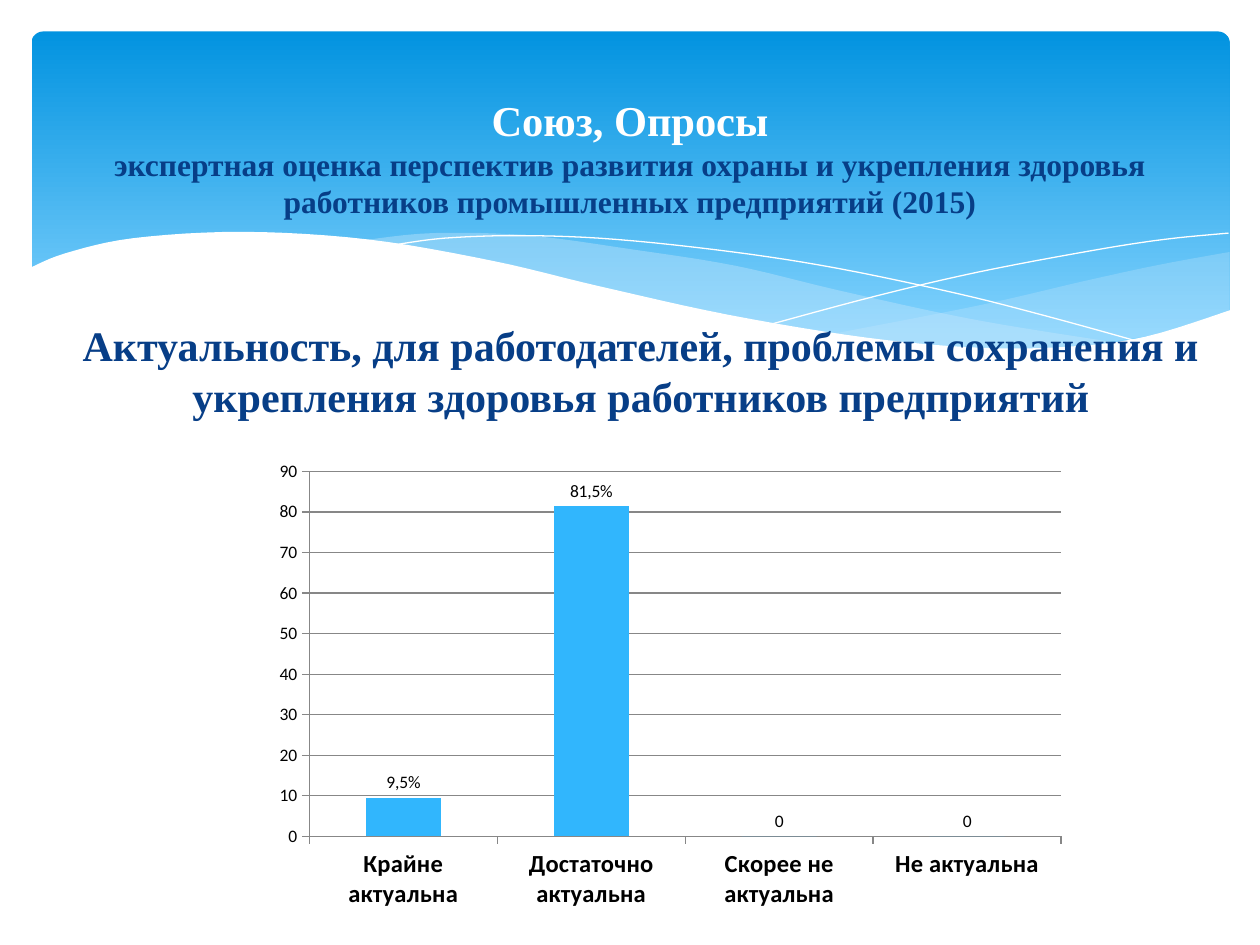
from lxml import etree
from pptx import Presentation
from pptx.chart import data as cd
from pptx.dml.color import RGBColor
from pptx.enum import chart as ch, shapes, text
from pptx.oxml import ns
from pptx.util import Inches, Pt

COLORS = {
    "white": "FFFFFF", "black": "000000", "navy": "073E87",
    "band_top": "0293E0", "band_bottom": "83D3FE", "wave": "C6E7FC",
    "bar": "31B6FD", "grid": "878787",
}
SERIF = "Times New Roman"
SANS = "Calibri"

RIGHT_WAVE = [
    [(9.51, 1.75), (8.96, 1.85), (8.36, 1.98), (7.54, 2.17), (6.36, 2.4)],
    [(6.36, 2.4), (6.94, 2.49), (7.56, 2.52), (8.1, 2.52), (8.64, 2.45),
     (9.1, 2.37), (9.51, 2.22)],
]
MIDDLE_WAVE = [
    [(2.61, 1.66), (3.19, 1.6), (3.95, 1.62), (4.77, 1.73), (5.59, 1.86),
     (6.43, 2.06), (7.5, 2.29), (8.68, 2.48)],
    [(8.68, 2.48), (8.03, 2.53), (7.36, 2.51), (6.4, 2.41), (5.41, 2.23),
     (4.24, 1.97), (3.37, 1.78), (2.61, 1.66)],
]
FALLING_LINE = [
    (2.84, 1.7), (3.28, 1.64), (3.91, 1.62), (4.64, 1.65), (5.57, 1.75),
    (6.4, 1.88), (7.35, 2.08), (8.06, 2.26), (8.82, 2.47),
]
RISING_LINE = [
    (5.88, 2.32), (6.7, 2.1), (7.51, 1.91), (8.41, 1.74), (8.99, 1.65), (9.5, 1.6),
]
WHITE_WAVE = [
    [(-0.02, 1.88), (0.27, 1.76), (0.81, 1.64), (1.68, 1.59), (2.67, 1.65),
     (3.66, 1.82), (4.5, 2.02), (5.54, 2.25), (6.63, 2.43), (7.53, 2.51),
     (8.25, 2.5), (8.85, 2.42), (9.52, 2.21)],
    [(9.52, 3.04), (-0.02, 3.04)],
]


def rgb(name):
    return RGBColor.from_string(COLORS[name])


def style(font, name, size, color, bold=False):
    font.name, font.size, font.bold = name, Pt(size), bold
    font.color.rgb = rgb(color)


def smooth(points, steps=6):
    padded = [points[0], *points, points[-1]]
    curve = [points[0]]
    for a, b, c, d in zip(padded, padded[1:], padded[2:], padded[3:]):
        for i in range(1, steps + 1):
            t = i / steps
            curve.append(tuple(
                (2 * q + (r - p) * t + (2 * p - 5 * q + 4 * r - s) * t ** 2
                 + (3 * q - p - 3 * r + s) * t ** 3) / 2
                for p, q, r, s in zip(a, b, c, d)))
    return curve


def add_curve(s, left, top, edges, closed):
    points = [(Inches(left + x), Inches(top + y))
              for edge in edges for x, y in smooth(edge)]
    builder = s.shapes.build_freeform(*points[0])
    builder.add_line_segments(points[1:], close=closed)
    sp = builder.convert_to_shape()
    sp.shadow.inherit = False
    return sp


def add_wave(s, left, top, edges, color, opacity=100):
    sp = add_curve(s, left, top, edges, True)
    sp.fill.solid()
    sp.fill.fore_color.rgb = rgb(color)
    sp.line.fill.background()
    if opacity < 100:
        clr = sp.fill._xPr.find(".//" + ns.qn("a:srgbClr"))
        etree.SubElement(clr, ns.qn("a:alpha"), val=str(opacity * 1000))


def add_hairline(s, left, top, points):
    sp = add_curve(s, left, top, [points], False)
    sp.fill.background()
    sp.line.color.rgb = rgb("white")
    sp.line.width = Pt(0)


def add_banner(s, left, top, width, height):
    sp = s.shapes.add_shape(shapes.MSO_SHAPE.ROUNDED_RECTANGLE, Inches(left),
                            Inches(top), Inches(width), Inches(height))
    sp.adjustments[0] = 0.034
    sp.shadow.inherit = False
    sp.line.fill.background()
    sp.fill.gradient()
    sp.fill.gradient_angle = 270
    stops = zip(sp.fill.gradient_stops, (0, 0.9), ("band_top", "band_bottom"))
    for stop, position, color in stops:
        stop.position = position
        stop.color.rgb = rgb(color)
    add_wave(s, left, top, RIGHT_WAVE, "wave", 29)
    add_wave(s, left, top, MIDDLE_WAVE, "wave", 40)
    for points in (FALLING_LINE, RISING_LINE):
        add_hairline(s, left, top, points)
    add_wave(s, left, top, WHITE_WAVE, "white")


def add_heading(s, left, top, width, height, anchor, lines):
    tf = s.shapes.add_textbox(Inches(left), Inches(top), Inches(width),
                              Inches(height)).text_frame
    tf.word_wrap = True
    tf.vertical_anchor = anchor
    for i, (line, size, color) in enumerate(lines):
        p = tf.add_paragraph() if i else tf.paragraphs[0]
        p.text = line
        p.alignment = text.PP_ALIGN.CENTER
        style(p.runs[0].font, SERIF, size, color, True)


def add_relevance_chart(s, left, top, width, height):
    data = cd.CategoryChartData()
    data.categories = ["Крайне актуальна", "Достаточно актуальна",
                       "Скорее не актуальна", "Не актуальна"]
    data.add_series("Актуальность", (9.5, 81.5, 0, 0))
    chart = s.shapes.add_chart(ch.XL_CHART_TYPE.COLUMN_CLUSTERED, Inches(left),
                               Inches(top), Inches(width), Inches(height), data).chart
    chart.has_legend = chart.has_title = False
    style(chart.font, SANS, 10, "black")

    plot = chart.plots[0]
    plot.gap_width = 150
    plot.vary_by_categories = False
    series = plot.series[0]
    series.format.fill.solid()
    series.format.fill.fore_color.rgb = rgb("bar")
    labels = series.data_labels
    labels.show_value = True
    labels.position = ch.XL_LABEL_POSITION.OUTSIDE_END
    style(labels.font, SANS, 10, "black")
    for i, label in enumerate(("9,5%", "81,5%")):
        point_label = series.points[i].data_label
        point_label.text_frame.text = label
        point_label.position = ch.XL_LABEL_POSITION.OUTSIDE_END
        style(point_label.text_frame.paragraphs[0].runs[0].font, SANS, 10, "black")

    values, cats = chart.value_axis, chart.category_axis
    values.minimum_scale, values.maximum_scale, values.major_unit = 0, 90, 10
    values.has_major_gridlines = True
    for line in (values.major_gridlines.format.line, values.format.line, cats.format.line):
        line.color.rgb = rgb("grid")
        line.width = Pt(0.75)
    for axis in (values, cats):
        axis.major_tick_mark = ch.XL_TICK_MARK.OUTSIDE
    style(cats.tick_labels.font, SANS, 14, "black", True)


def main():
    prs = Presentation()
    prs.slide_width, prs.slide_height = Inches(10), Inches(7.5)
    s = prs.slides.add_slide(prs.slide_layouts[6])
    add_banner(s, 0.25, 0.25, 9.51, 2.7)
    add_heading(s, 0.28, 2.49, 9.61, 1, text.MSO_ANCHOR.TOP, [
        ("Актуальность, для работодателей, проблемы сохранения и укрепления "
         "здоровья работников предприятий", 24, "navy")])
    add_heading(s, 0.5, 0.38, 9, 1.73, text.MSO_ANCHOR.MIDDLE, [
        ("Союз, Опросы", 24.3, "white"),
        ("экспертная оценка перспектив развития охраны и укрепления здоровья "
         "работников промышленных предприятий (2015)", 18, "navy")])
    add_relevance_chart(s, 2.09, 3.59, 6.46, 3.7)
    prs.save("out.pptx")


if __name__ == "__main__":
    main()
